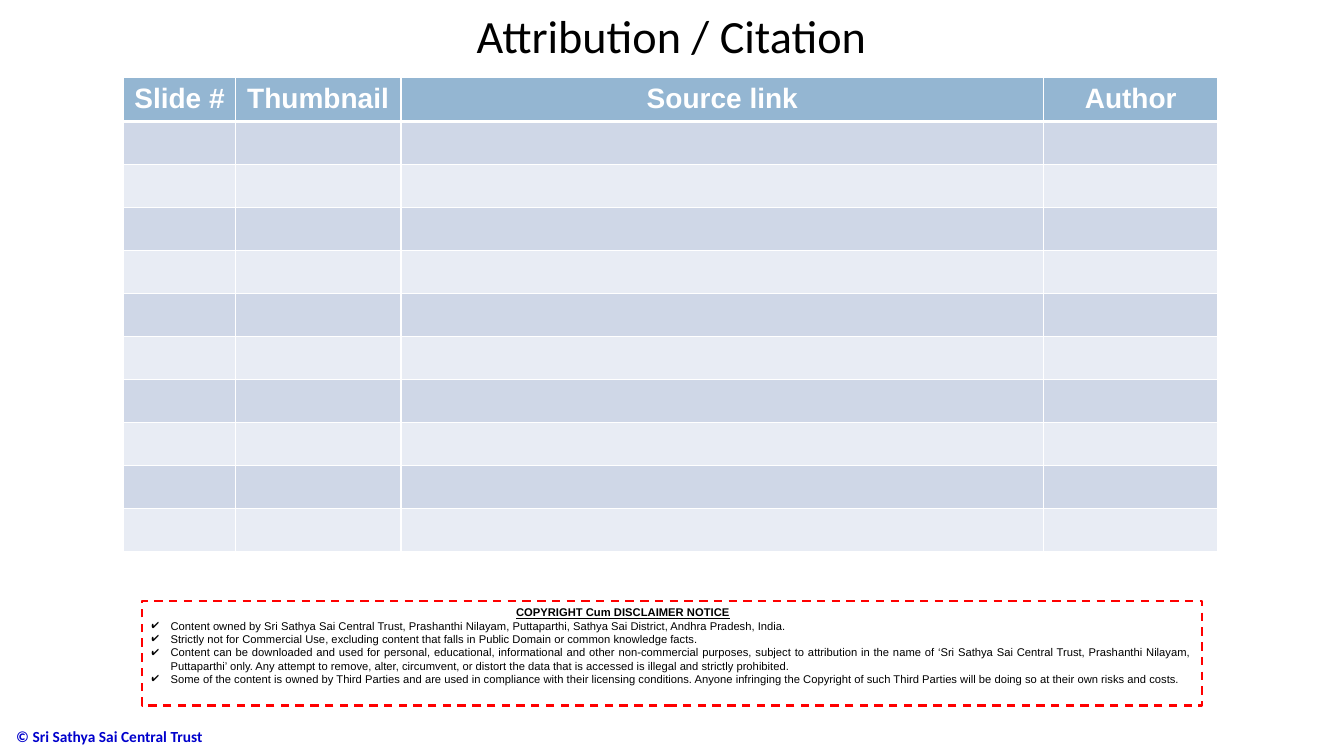
import lxml.etree
import pptx
import pptx.dml.color
import pptx.enum.dml
import pptx.enum.shapes
import pptx.enum.text
import pptx.oxml.ns
import pptx.util

PX = 9525
COLORS = {
    "white": "FFFFFF", "black": "000000", "header": "94B6D2", "odd": "CFD7E7",
    "even": "E8ECF4", "dash": "FF0000", "copyright": "0000CC",
}
ALIGN = pptx.enum.text.PP_ALIGN
ANCHOR = pptx.enum.text.MSO_ANCHOR
HEADINGS = ["Slide #", "Thumbnail", "Source link", "Author"]
COLUMN_WIDTHS = [106, 158, 612, 166]
BODY_ROWS = 10
NOTICE_HEADING = "COPYRIGHT Cum DISCLAIMER NOTICE"
NOTICE_ITEMS = [
    "Content owned by Sri Sathya Sai Central Trust, Prashanthi Nilayam, Puttaparthi, "
    "Sathya Sai District, Andhra Pradesh, India.",
    "Strictly not for Commercial Use, excluding content that falls in Public Domain "
    "or common knowledge facts.",
    "Content can be downloaded and used for personal, educational, informational and "
    "other non-commercial purposes, subject to attribution in the name of ‘Sri Sathya "
    "Sai Central Trust, Prashanthi Nilayam, Puttaparthi’ only. Any attempt to remove, "
    "alter, circumvent, or distort the data that is accessed is illegal and strictly "
    "prohibited.",
    "Some of the content is owned by Third Parties and are used in compliance with "
    "their licensing conditions. Anyone infringing the Copyright of such Third Parties "
    "will be doing so at their own risks and costs.",
]


def rgb(name):
    """Return the named colour."""
    return pptx.dml.color.RGBColor.from_string(COLORS[name])


def emu(box):
    """Turn px lengths into EMU."""
    return [length * PX for length in box]


def set_all(target, values):
    """Set attributes from a dict."""
    for name, value in values.items():
        setattr(target, name, value)


def add_element(parent, tag, **attributes):
    """Append a DrawingML element and return it."""
    return lxml.etree.SubElement(parent, pptx.oxml.ns.qn(tag), attributes)


def write(paragraph, text, size, color, align, font="Calibri", **formats):
    """Fill a paragraph with one formatted run."""
    run = paragraph.add_run()
    run.text = text
    paragraph.alignment = align
    set_all(run.font, {"size": pptx.util.Pt(size), "name": font, **formats})
    run.font.color.rgb = rgb(color)


def set_indent(paragraph, margin, first_line=0):
    """Set the left margin and first-line indent, and return the properties."""
    properties = paragraph._p.get_or_add_pPr()
    properties.set("marL", str(margin * PX))
    properties.set("indent", str(first_line * PX))
    return properties


def add_title(slide, box):
    """Place and format the title placeholder."""
    title = slide.shapes.title
    set_all(title, dict(zip(("left", "top", "width", "height"), emu(box))))
    set_all(title.text_frame, {
        "auto_size": pptx.enum.text.MSO_AUTO_SIZE.NONE,
        "vertical_anchor": ANCHOR.TOP, "word_wrap": True,
    })
    paragraph = title.text_frame.paragraphs[0]
    paragraph.line_spacing = 0.8
    write(paragraph, "Attribution / Citation", 33, "black", ALIGN.CENTER)


def style_cell(cell, fill, top, bottom):
    """Give a cell its fill and white borders."""
    cell.fill.solid()
    cell.fill.fore_color.rgb = rgb(fill)
    properties = cell._tc.get_or_add_tcPr()
    borders = [("a:lnL", 1), ("a:lnR", 1), ("a:lnT", top), ("a:lnB", bottom)]
    for index, (tag, width) in enumerate(borders):
        line = add_element(properties, tag, w=str(pptx.util.Pt(width)))
        add_element(add_element(line, "a:solidFill"), "a:srgbClr", val=COLORS["white"])
        properties.insert(index, line)


def add_source_table(slide, box):
    """Add the attribution table with its empty banded rows."""
    rows = BODY_ROWS + 1
    table = slide.shapes.add_table(rows, len(HEADINGS), *emu(box)).table
    table.horz_banding = False
    for column, width in zip(table.columns, COLUMN_WIDTHS):
        column.width = width * PX
    for index, row in enumerate(table.rows):
        row.height = box[3] // rows * PX
        fill = ("even", "odd")[index % 2] if index else "header"
        for cell in row.cells:
            style_cell(cell, fill, 3 if index == 1 else 1, 1 if index else 3)
    for cell, heading in zip(table.rows[0].cells, HEADINGS):
        write(cell.text_frame.paragraphs[0], heading, 20, "white", ALIGN.CENTER,
              "Arial", bold=True)


def add_notice(slide, box):
    """Add the dashed disclaimer box with its check-marked list."""
    shape = slide.shapes.add_shape(pptx.enum.shapes.MSO_SHAPE.RECTANGLE, *emu(box))
    shape.shadow.inherit = False
    shape.fill.background()
    set_all(shape.line, {
        "width": pptx.util.Pt(1.5), "dash_style": pptx.enum.dml.MSO_LINE.DASH,
    })
    shape.line.color.rgb = rgb("dash")
    frame = shape.text_frame
    set_all(frame, {"word_wrap": True, "vertical_anchor": ANCHOR.TOP})
    set_indent(frame.paragraphs[0], 347)
    write(frame.paragraphs[0], NOTICE_HEADING, 8, "black", ALIGN.LEFT, "Arial",
          bold=True, underline=True)
    for item in NOTICE_ITEMS:
        paragraph = frame.add_paragraph()
        properties = set_indent(paragraph, 18, -18)
        color = add_element(properties, "a:buClr")
        add_element(color, "a:srgbClr", val=COLORS["black"])
        add_element(properties, "a:buChar", char="✔")
        write(paragraph, item, 8, "black", ALIGN.JUSTIFY, "Arial")


def add_copyright(slide, box):
    """Add the copyright line."""
    frame = slide.shapes.add_textbox(*emu(box)).text_frame
    set_all(frame, {"word_wrap": True, "vertical_anchor": ANCHOR.MIDDLE})
    write(frame.paragraphs[0], "© Sri Sathya Sai Central Trust", 11, "copyright",
          ALIGN.LEFT, bold=True)


def main():
    """Build and save the presentation."""
    presentation = pptx.Presentation()
    set_all(presentation, {"slide_width": 1280 * PX, "slide_height": 720 * PX})
    slide = presentation.slides.add_slide(presentation.slide_layouts[5])
    add_copyright(slide, (6, 682, 339, 38))
    add_source_table(slide, (118, 74, sum(COLUMN_WIDTHS), 451))
    add_title(slide, (372, 12, 535, 53))
    add_notice(slide, (135, 572, 1010, 100))
    presentation.save("out.pptx")


if __name__ == "__main__":
    main()
